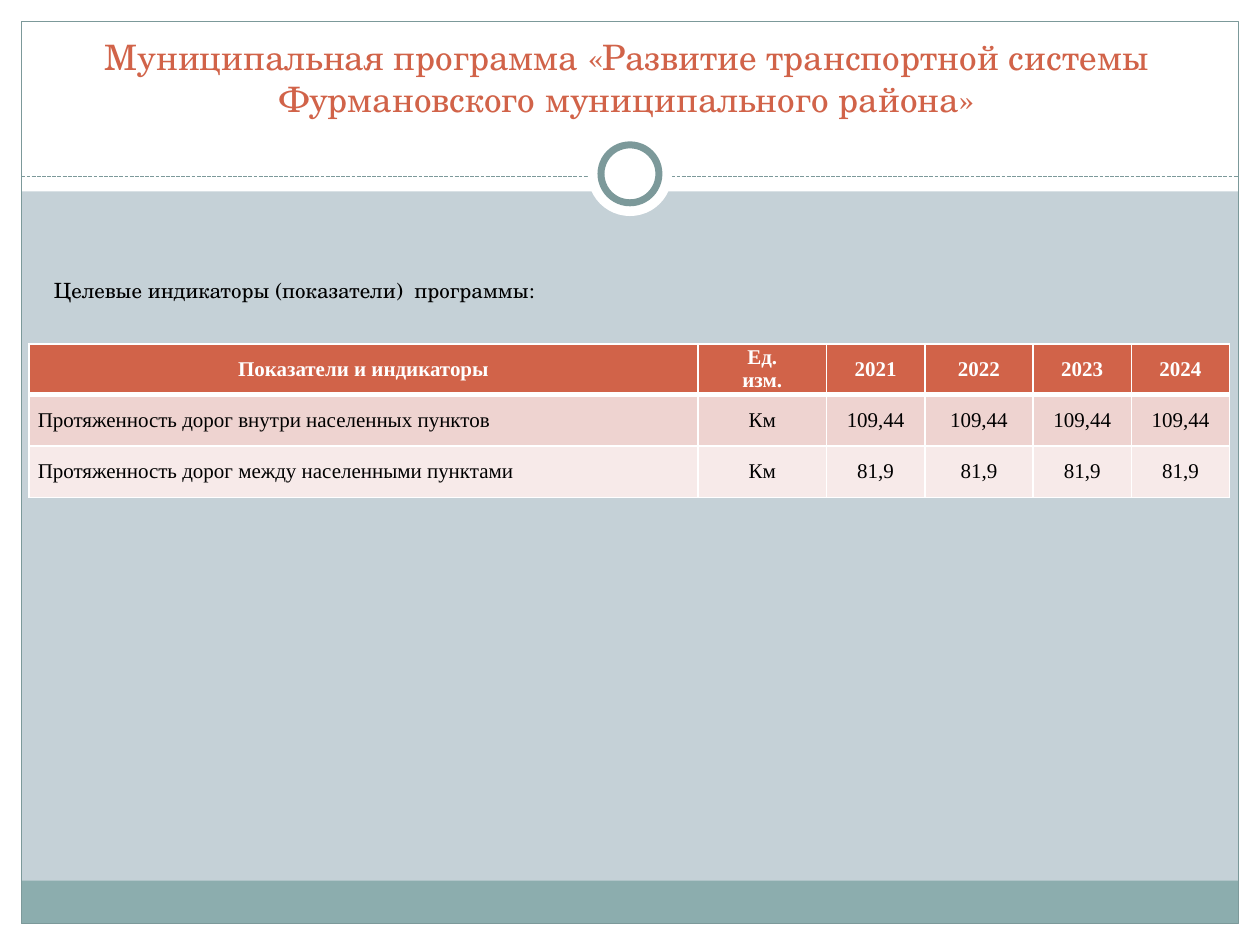
from dataclasses import dataclass

from lxml import etree
from pptx import Presentation
from pptx.dml.color import RGBColor
from pptx.enum import dml, shapes, text
from pptx.oxml import ns
from pptx.util import Inches, Pt


@dataclass(frozen=True)
class Theme:
    background: str = "C5D1D7"
    white: str = "FFFFFF"
    black: str = "000000"
    accent: str = "D16349"
    outline: str = "7C999A"
    footer: str = "8CADAE"
    bands: tuple = ("EED3D0", "F7EAE9")
    heading_font: str = "TeX Gyre Schola"
    table_font: str = "Times New Roman"
    title_size: int = 20
    body_size: int = 12


THEME = Theme()
HEADERS = ["Показатели и индикаторы", "Ед.\nизм.", "2021", "2022", "2023", "2024"]
INDICATORS = [
    ["Протяженность дорог внутри населенных пунктов", "Км"] + ["109,44"] * 4,
    ["Протяженность дорог между населенными пунктами", "Км"] + ["81,9"] * 4,
]
COLUMN_WIDTHS = [5.31, 1.02, 0.78, 0.86, 0.78, 0.78]
ROW_HEIGHTS = [0.38, 0.41, 0.41]


def rgb(color):
    return RGBColor.from_string(color)


def add_figure(slide, kind, box, fill=None, line=None, line_width=0.75):
    figure = slide.shapes.add_shape(kind, *map(Inches, box))
    figure.shadow.inherit = False
    if fill:
        figure.fill.solid()
        figure.fill.fore_color.rgb = rgb(fill)
    else:
        figure.fill.background()
    if line:
        figure.line.color.rgb = rgb(line)
        figure.line.width = Pt(line_width)
    else:
        figure.line.fill.background()


def style_paragraphs(frame, font, size, color, align, bold=False):
    for paragraph in frame.paragraphs:
        paragraph.alignment = align
        paragraph.font.name = font
        paragraph.font.size = Pt(size)
        paragraph.font.bold = bold
        paragraph.font.color.rgb = rgb(color)


def add_heading(slide, box, words, size, color, align, anchor):
    frame = slide.shapes.add_textbox(*map(Inches, box)).text_frame
    frame.word_wrap = True
    frame.vertical_anchor = anchor
    frame.text = words
    style_paragraphs(frame, THEME.heading_font, size, color, align)


def add_frame(slide, box):
    """White margins and header, footer band and outline around the inner box."""
    left, top, width, height = box
    right, bottom = left + width, top + height
    rect = shapes.MSO_SHAPE.RECTANGLE
    for margin in (
        (0, bottom, 10, 7.5 - bottom),
        (0, 0, 10, 1.52),
        (0, 0, left, 7.5),
        (right, 0, 10 - right, 7.5),
    ):
        add_figure(slide, rect, margin, THEME.white)
    add_figure(slide, rect, (left, bottom - 0.34, width, 0.34), THEME.footer)
    add_figure(slide, rect, box, line=THEME.outline)


def add_divider(slide, left, right, y):
    """Dashed rule with a ring at its middle."""
    rule = slide.shapes.add_connector(
        shapes.MSO_CONNECTOR.STRAIGHT, *map(Inches, (left, y, right, y)))
    rule.line.color.rgb = rgb(THEME.outline)
    rule.line.width = Pt(0.75)
    rule.line.dash_style = dml.MSO_LINE.SQUARE_DOT
    etree.SubElement(rule._element.spPr, ns.qn("a:effectLst"))

    middle, ring_y = (left + right) / 2, y - 0.02
    for size, line in ((0.67, None), (0.46, THEME.outline)):
        box = (middle - size / 2, ring_y - size / 2, size, size)
        add_figure(slide, shapes.MSO_SHAPE.OVAL, box, THEME.white, line, 4)


def set_borders(cell, bottom_width):
    properties = cell._tc.get_or_add_tcPr()
    widths = {"lnL": 1, "lnR": 1, "lnT": 1, "lnB": bottom_width}
    for position, (side, width) in enumerate(widths.items()):
        border = etree.Element(ns.qn(f"a:{side}"), w=str(Pt(width)))
        fill = etree.SubElement(border, ns.qn("a:solidFill"))
        etree.SubElement(fill, ns.qn("a:srgbClr"), val=THEME.white)
        properties.insert(position, border)


def fill_cell(cell, words, fill, color, align, is_header):
    cell.text = words
    cell.vertical_anchor = text.MSO_ANCHOR.MIDDLE
    cell.margin_left = cell.margin_right = Inches(0.07)
    cell.margin_top = cell.margin_bottom = 0
    cell.fill.solid()
    cell.fill.fore_color.rgb = rgb(fill)
    style_paragraphs(cell.text_frame, THEME.table_font, THEME.body_size,
                     color, align, is_header)
    set_borders(cell, 3 if is_header else 1)


def add_indicators(slide, left, top):
    rows = [HEADERS] + INDICATORS
    box = (left, top, sum(COLUMN_WIDTHS), sum(ROW_HEIGHTS))
    table = slide.shapes.add_table(
        len(rows), len(HEADERS), *map(Inches, box)).table
    for column, width in zip(table.columns, COLUMN_WIDTHS):
        column.width = Inches(width)
    for r, (values, height) in enumerate(zip(rows, ROW_HEIGHTS)):
        table.rows[r].height = Inches(height)
        is_header = r == 0
        fill = THEME.accent if is_header else THEME.bands[r - 1]
        color = THEME.white if is_header else THEME.black
        for c, words in enumerate(values):
            centred = is_header or c > 0
            align = text.PP_ALIGN.CENTER if centred else text.PP_ALIGN.LEFT
            fill_cell(table.cell(r, c), words, fill, color, align, is_header)


def main():
    presentation = Presentation()
    presentation.slide_width, presentation.slide_height = Inches(10), Inches(7.5)
    slide = presentation.slides.add_slide(presentation.slide_layouts[6])
    slide.background.fill.solid()
    slide.background.fill.fore_color.rgb = rgb(THEME.background)

    add_frame(slide, (0.17, 0.17, 9.66, 7.16))
    add_divider(slide, 0.17, 9.83, 1.4)
    add_heading(
        slide, (0.31, 0.47, 9.33, 0.53),
        "Муниципальная программа «Развитие транспортной системы "
        "Фурмановского муниципального района»",
        THEME.title_size, THEME.accent,
        text.PP_ALIGN.CENTER, text.MSO_ANCHOR.BOTTOM)
    add_heading(
        slide, (0.33, 1.67, 9.3, 0.78),
        "Целевые индикаторы (показатели)  программы:",
        THEME.body_size, THEME.black,
        text.PP_ALIGN.LEFT, text.MSO_ANCHOR.BOTTOM)
    add_indicators(slide, 0.23, 2.73)
    presentation.save("out.pptx")


if __name__ == "__main__":
    main()
